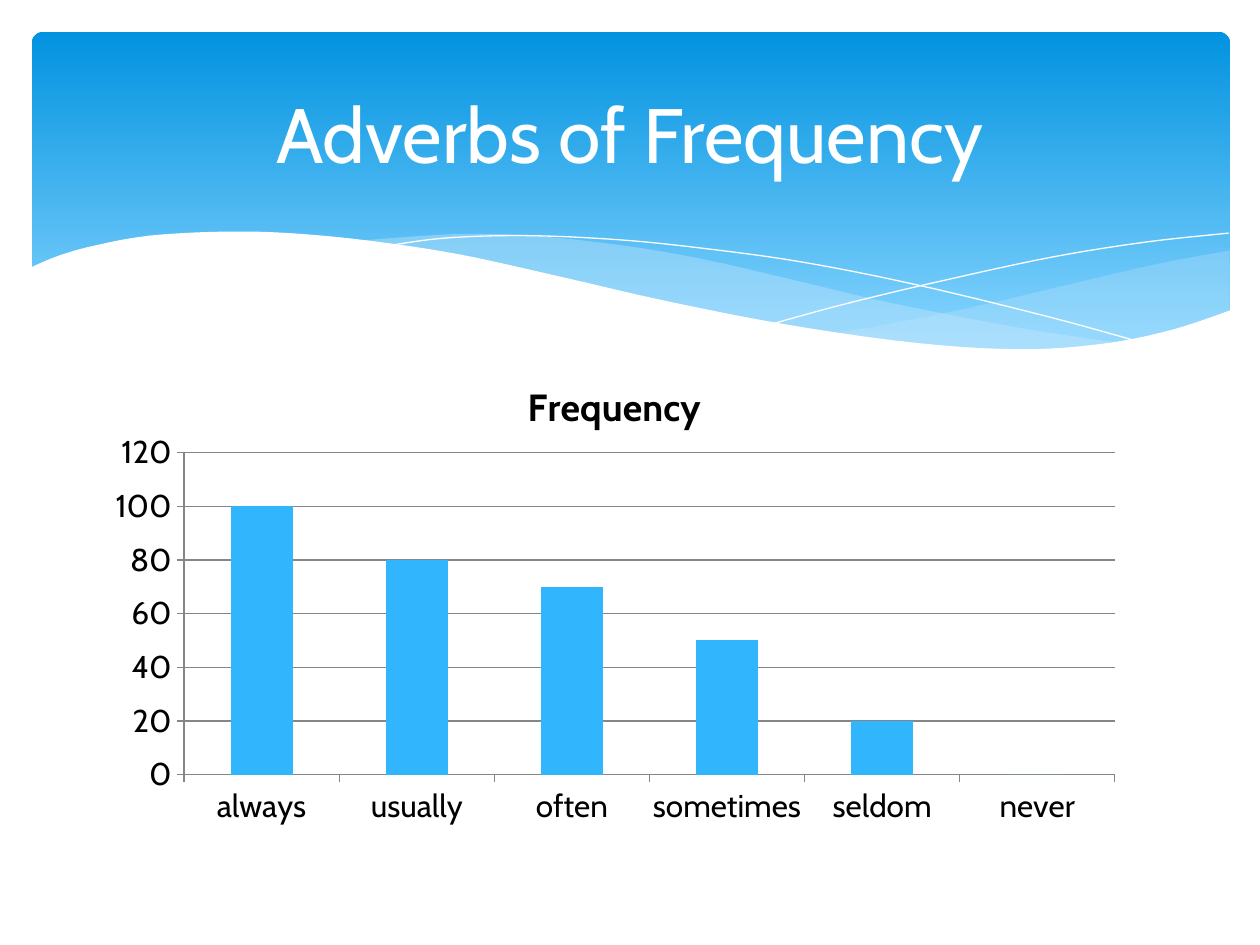
"""Build the slide on adverbs of frequency: a waved header over a column chart."""
from lxml import etree
from pptx import Presentation
from pptx.chart.data import CategoryChartData
from pptx.dml.color import RGBColor
from pptx.enum.chart import XL_CHART_TYPE, XL_TICK_MARK
from pptx.enum.shapes import MSO_SHAPE
from pptx.enum.text import MSO_ANCHOR, PP_ALIGN
from pptx.oxml.ns import qn
from pptx.util import Cm, Pt

STACKED = XL_CHART_TYPE.COLUMN_STACKED
OUTSIDE = XL_TICK_MARK.OUTSIDE
ROUNDED = MSO_SHAPE.ROUNDED_RECTANGLE
MIDDLE = MSO_ANCHOR.MIDDLE
CENTER = PP_ALIGN.CENTER

FONT = "Cabin"
HEADING = "Adverbs of Frequency"
SERIES = "Frequency"
FREQUENCIES = {"always": 100, "usually": 80, "often": 70,
               "sometimes": 50, "seldom": 20, "never": 0}

SLIDE_SIZE = (25.4, 19.05)
HEADER_BOX = (0.64, 0.64, 24.16, 6.86)
HEADING_BOX = (1.27, 0.94, 22.86, 3.48)
CHART_BOX = (1.96, 7.19, 20.85, 9.88)
PLOT = {"x": 0.084, "y": 0.196, "w": 0.9, "h": 0.657}
HEADER_STOPS = [(0, "0293E0"), (0.9, "83D3FE")]

RIGHT_SWELL = [
    [(24.79, 5.05), (23.39, 5.31), (21.87, 5.66), (19.79, 6.15), (17.93, 6.53), (16.79, 6.73)],
    [(16.79, 6.73), (18.24, 6.91), (19.53, 7.04), (20.68, 7.06), (21.92, 6.99),
     (22.99, 6.83), (23.93, 6.58), (24.79, 6.27)],
]
LEFT_SWELL = [
    [(22.68, 6.93), (20.5, 6.6), (17.93, 6.1), (15.98, 5.64), (14.1, 5.21),
     (12.42, 4.93), (10.67, 4.75), (9.17, 4.72), (7.26, 4.85)],
    [(7.26, 4.85), (9.19, 5.16), (11.4, 5.64), (13.46, 6.1), (15.7, 6.55),
     (17.65, 6.86), (19.33, 7.04), (20.78, 7.06), (22.68, 6.93)],
]
FALLING_LINE = [
    [(7.85, 4.95), (8.97, 4.8), (10.57, 4.75), (12.42, 4.83), (14.12, 5),
     (16.15, 5.28), (18.47, 5.74), (21.11, 6.38), (23.04, 6.91)],
]
RISING_LINE = [
    [(15.57, 6.53), (17.07, 6.12), (19, 5.66), (21.23, 5.18), (23.11, 4.88), (24.77, 4.7)],
]
WHITE_WAVE = [
    [(24.82, 6.25), (23.62, 6.65), (22.23, 6.93), (20.55, 7.04), (18.44, 6.91), (15.9, 6.55),
     (13.44, 6.07), (11.35, 5.59), (9.27, 5.13), (7.42, 4.85), (5.84, 4.7), (4.5, 4.67),
     (3.02, 4.75), (1.91, 4.95), (1.17, 5.16), (0.58, 5.41)],
    [(0.58, 8.36), (24.82, 8.36)],
]
WAVES = [
    (RIGHT_SWELL, "C6E7FC", 29),
    (LEFT_SWELL, "C6E7FC", 40),
    (FALLING_LINE, None, None),
    (RISING_LINE, None, None),
    (WHITE_WAVE, "FFFFFF", 100),
]


def color(code):
    return RGBColor.from_string(code)


def lengths(values):
    return [Cm(value) for value in values]


def apply(target, formats):
    for name, value in formats.items():
        setattr(target, name, value)


def paint(fill, code):
    fill.solid()
    fill.fore_color.rgb = color(code)


def smooth(anchors, steps=6):
    """Return points on a Catmull-Rom curve through the anchors."""
    padded = [anchors[0], *anchors, anchors[-1]]
    points = [anchors[0]]
    for a, b, c, d in zip(padded, padded[1:], padded[2:], padded[3:]):
        for step in range(1, steps + 1):
            t = step / steps
            points.append(tuple(
                (2 * q + (r - p) * t + (2 * p - 5 * q + 4 * r - s) * t ** 2
                 + (3 * q - p - 3 * r + s) * t ** 3) / 2
                for p, q, r, s in zip(a, b, c, d)))
    return points


def add_header(slide):
    header = slide.shapes.add_shape(ROUNDED, *lengths(HEADER_BOX))
    header.adjustments[0] = 0.034
    header.shadow.inherit = False
    header.line.fill.background()
    header.fill.gradient()
    header.fill.gradient_angle = 270
    for stop, (position, code) in zip(header.fill.gradient_stops, HEADER_STOPS):
        apply(stop, {"position": position})
        stop.color.rgb = color(code)


def add_wave(slide, edges, code, opacity):
    points = [lengths(point) for edge in edges for point in smooth(edge)]
    builder = slide.shapes.build_freeform(*points[0])
    builder.add_line_segments(points[1:], close=code is not None)
    wave = builder.convert_to_shape()
    wave.shadow.inherit = False
    if code is None:
        wave.fill.background()
        paint(wave.line.fill, "FFFFFF")
        wave.line.width = Pt(0)
        return
    wave.line.fill.background()
    paint(wave.fill, code)
    if opacity < 100:
        tone = wave.fill._xPr.find(".//" + qn("a:srgbClr"))
        etree.SubElement(tone, qn("a:alpha"), val=str(opacity * 1000))


def place_plot(chart):
    plot_area = chart._chartSpace.chart.plotArea
    for old in plot_area.findall(qn("c:layout")):
        plot_area.remove(old)
    layout = etree.Element(qn("c:layout"))
    plot_area.insert(0, layout)
    manual = etree.SubElement(layout, qn("c:manualLayout"))
    values = {"layoutTarget": "inner", "xMode": "edge", "yMode": "edge", **PLOT}
    for tag, value in values.items():
        etree.SubElement(manual, qn("c:" + tag), val=str(value))


def add_frequency_chart(slide):
    data = CategoryChartData()
    data.categories = list(FREQUENCIES)
    data.add_series(SERIES, list(FREQUENCIES.values()))
    chart = slide.shapes.add_chart(STACKED, *lengths(CHART_BOX), data).chart
    apply(chart, {"has_legend": False, "has_title": True})
    apply(chart.font, {"name": FONT, "size": Pt(18)})
    chart.font.color.rgb = color("000000")

    title = chart.chart_title
    title.include_in_layout = False
    title.text_frame.text = SERIES
    title_font = title.text_frame.paragraphs[0].runs[0].font
    apply(title_font, {"name": FONT, "size": Pt(21.6), "bold": True})
    title_font.color.rgb = color("000000")

    columns = chart.plots[0]
    apply(columns, {"gap_width": 150, "overlap": 100, "vary_by_categories": False})
    paint(columns.series[0].format.fill, "31B6FD")

    scale = chart.value_axis
    apply(scale, {"minimum_scale": 0, "maximum_scale": 120, "major_unit": 20,
                  "has_major_gridlines": True})
    for axis in (scale, chart.category_axis):
        axis.major_tick_mark = OUTSIDE
    for rule in (scale, chart.category_axis, scale.major_gridlines):
        paint(rule.format.line.fill, "868686")
        rule.format.line.width = Pt(0.75)
    place_plot(chart)


def add_heading(slide):
    frame = slide.shapes.add_textbox(*lengths(HEADING_BOX)).text_frame
    apply(frame, {"word_wrap": True, "vertical_anchor": MIDDLE})
    line = frame.paragraphs[0]
    apply(line, {"text": HEADING, "alignment": CENTER})
    apply(line.font, {"name": FONT, "size": Pt(44)})
    line.font.color.rgb = color("FFFFFF")


def main():
    deck = Presentation()
    deck.slide_width, deck.slide_height = lengths(SLIDE_SIZE)
    slide = deck.slides.add_slide(deck.slide_layouts[6])
    add_header(slide)
    for wave in WAVES:
        add_wave(slide, *wave)
    add_frequency_chart(slide)
    add_heading(slide)
    deck.save("out.pptx")


if __name__ == "__main__":
    main()
